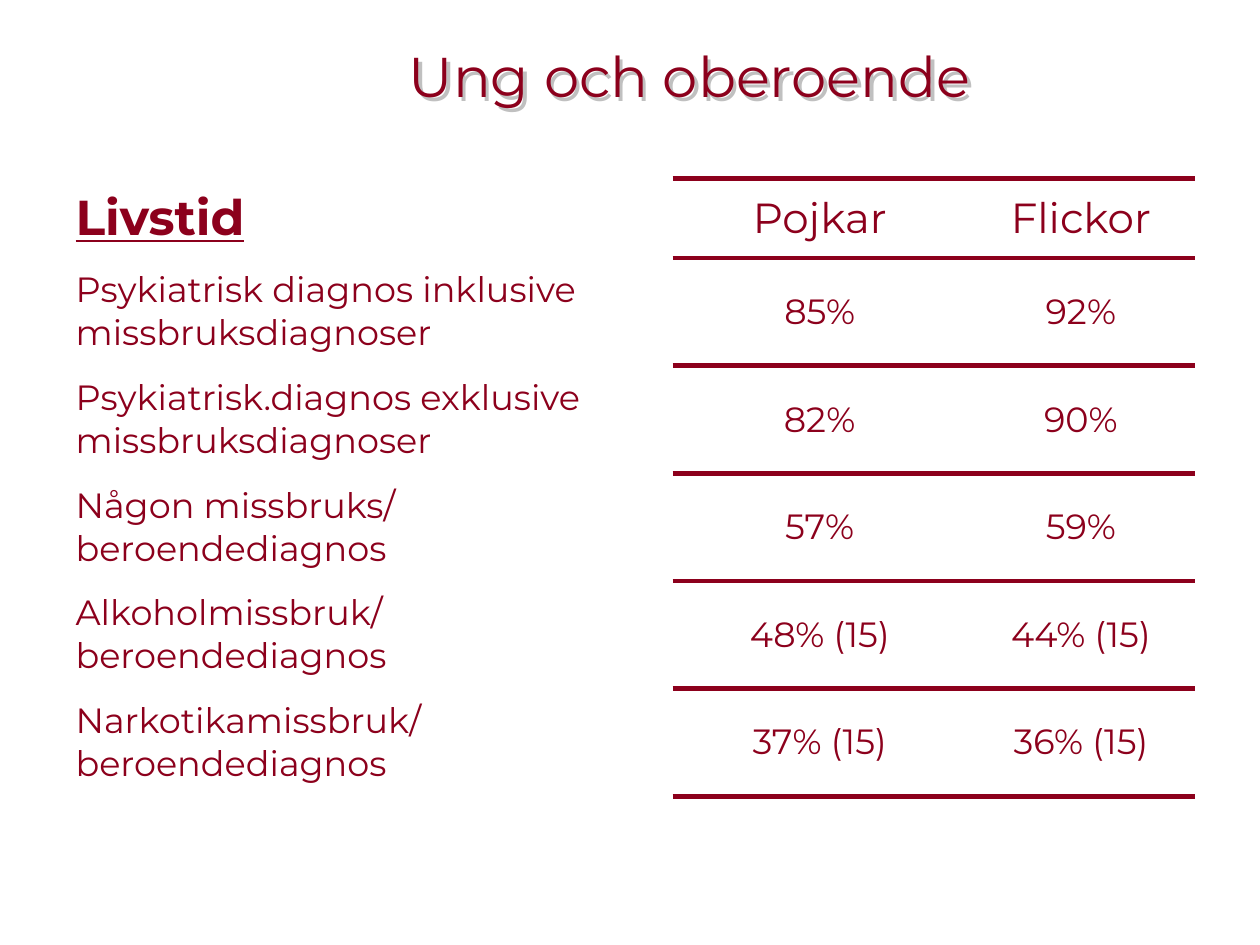
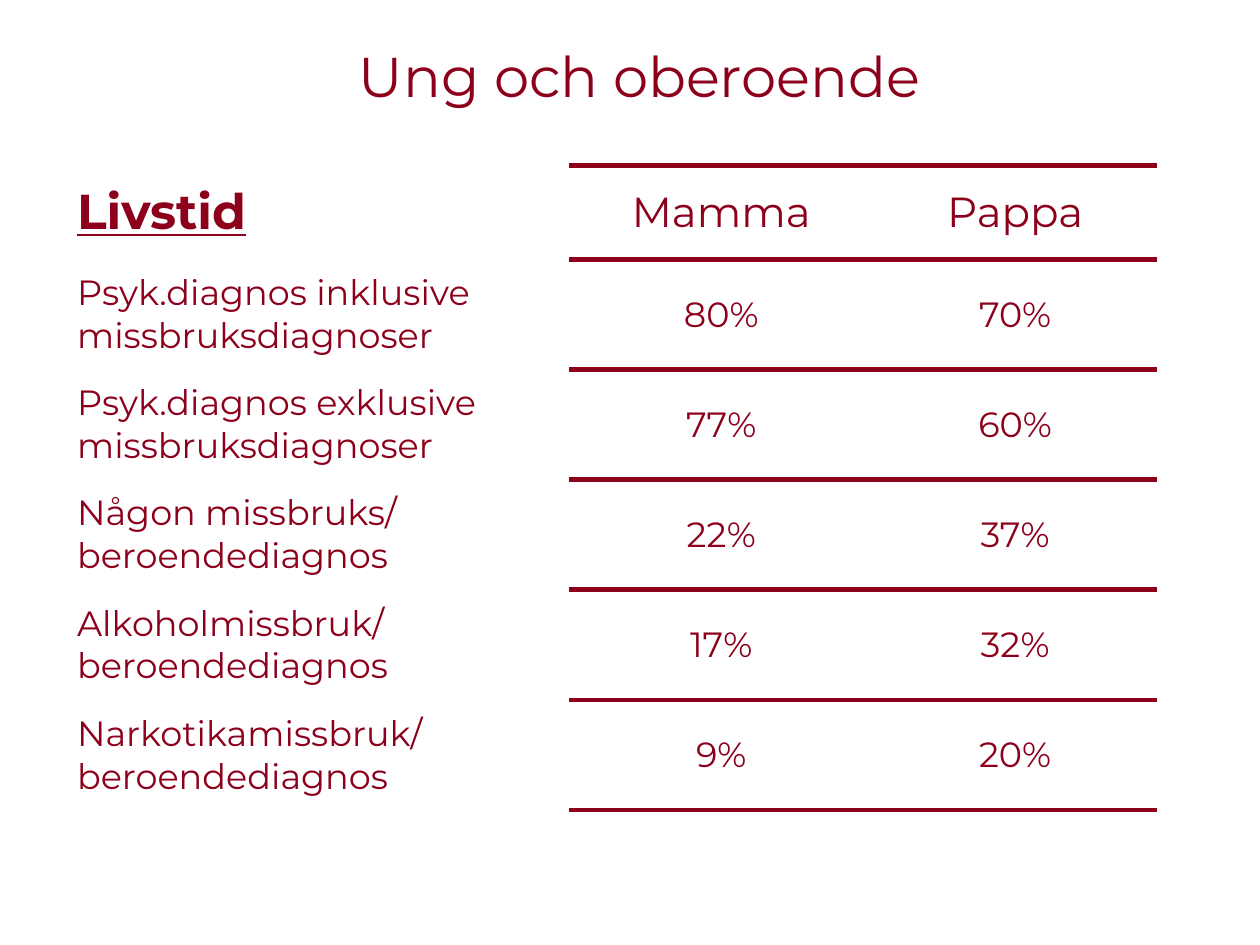
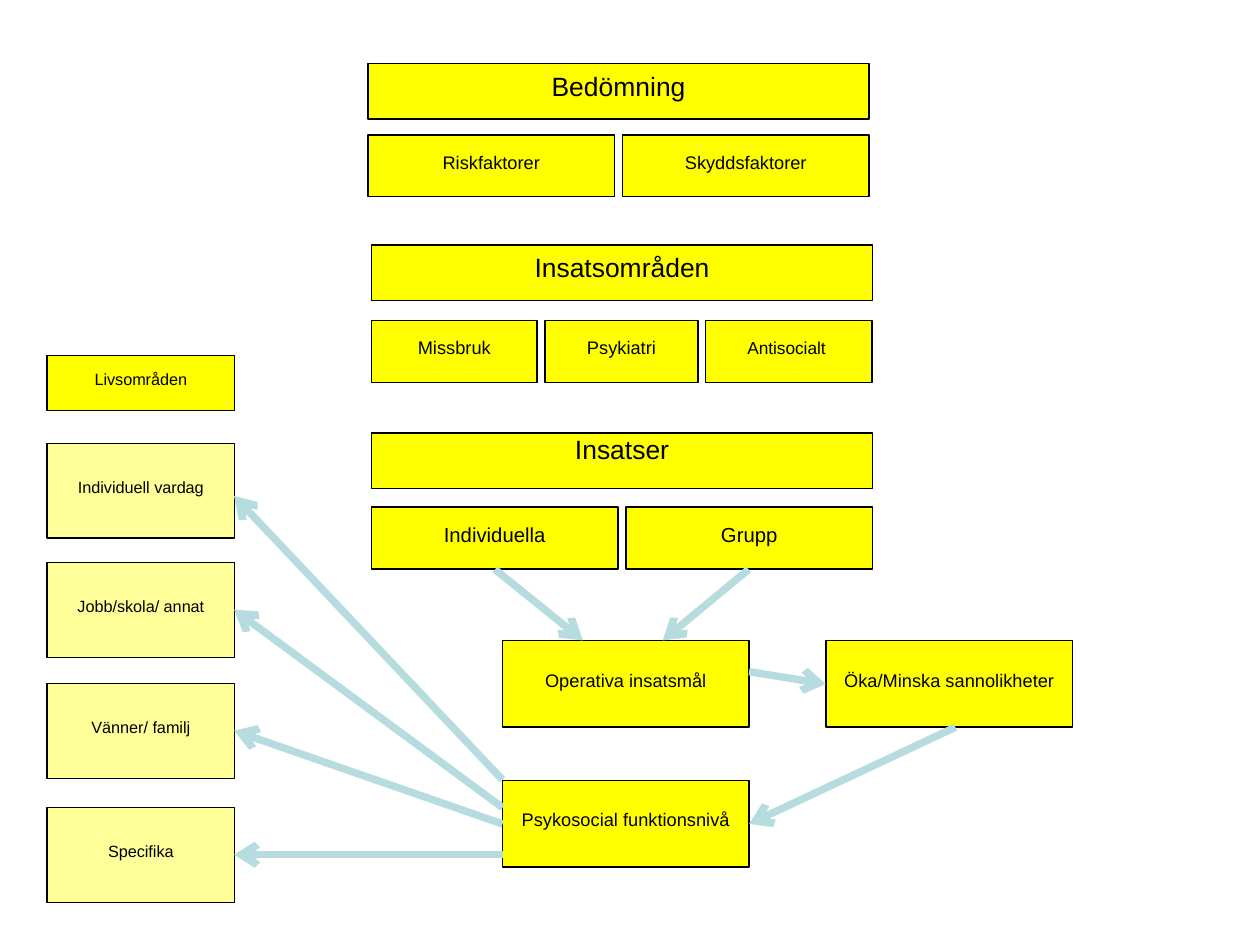
import pptx
import pptx.dml.color
import pptx.enum.shapes
import pptx.enum.text
import pptx.util
from lxml import etree
from pptx.oxml.ns import qn

Cm = pptx.util.Cm
Pt = pptx.util.Pt
ANCHOR = pptx.enum.text.MSO_ANCHOR
ALIGN = pptx.enum.text.PP_ALIGN
RECTANGLE = pptx.enum.shapes.MSO_SHAPE.RECTANGLE

# Shared look
WINE = "8C001C"
WHITE = "FFFFFF"
BLACK = "000000"
YELLOW = "FFFF00"
PALE_YELLOW = "FFFF99"
ICE_BLUE = "B6DCDF"
SHADOW_GREY = "C0C0C0"
TABLE_FONT = "Montserrat"
CHART_FONT = "Arial"
GAP = 0.16
SMALL, MEDIUM, LARGE, HEADING = 9.3, 10.4, 11.6, 15.1

# Diagnosis rows found in both tables
ADDICTION_LABELS = [
    "Någon missbruks/ beroendediagnos",
    "Alkoholmissbruk/ beroendediagnos",
    "Narkotikamissbruk/ beroendediagnos",
]


def colour(code):
    return pptx.dml.color.RGBColor.from_string(code)


def write(frame, text, size=20, font=TABLE_FONT, ink=WINE, bold=False,
          underline=False, align=ALIGN.CENTER):
    para = frame.paragraphs[0]
    para.alignment = align
    span = para.add_run()
    span.text = text
    span.font.name = font
    span.font.size = Pt(size)
    span.font.color.rgb = colour(ink)
    span.font.bold = bold
    span.font.underline = underline


def add_rectangle(page, left, top, width, height, fill):
    box = page.shapes.add_shape(RECTANGLE, Cm(left), Cm(top), Cm(width), Cm(height))
    box.shadow.inherit = False
    box.fill.solid()
    box.fill.fore_color.rgb = colour(fill)
    box.line.fill.background()
    box.text_frame.word_wrap = True
    return box


def write_title(box, anchor):
    box.text_frame.word_wrap = True
    box.text_frame.vertical_anchor = anchor
    write(box.text_frame, "Ung och oberoende", size=32)


def add_text_shadow(box):
    effects = etree.SubElement(box._element.spPr, qn("a:effectLst"))
    cast = etree.SubElement(effects, qn("a:outerShdw"), dist="38000",
                            dir="2700000", algn="ctr")
    etree.SubElement(cast, qn("a:srgbClr"), val=SHADOW_GREY)


def set_borders(cell, ruled):
    properties = cell._tc.get_or_add_tcPr()
    for side in ("L", "R", "T", "B"):
        line = etree.SubElement(properties, qn("a:ln" + side), w=str(Pt(3)))
        if ruled and side in "TB":
            fill = etree.SubElement(line, qn("a:solidFill"))
            etree.SubElement(fill, qn("a:srgbClr"), val=WINE)
        else:
            etree.SubElement(line, qn("a:noFill"))


def add_diagnosis_table(page, left, top, widths, header_height, row_height,
                        heads, rows):
    lines = [("Livstid", *heads), *rows]
    height = header_height + row_height * len(rows)
    table = page.shapes.add_table(len(lines), len(widths), Cm(left), Cm(top),
                                  Cm(sum(widths)), Cm(height)).table
    table.first_row = table.horz_banding = False
    for column, width in zip(table.columns, widths):
        column.width = Cm(width)
    for row_number, texts in enumerate(lines):
        is_head = row_number == 0
        table.rows[row_number].height = Cm(header_height if is_head else row_height)
        for column_number, text in enumerate(texts):
            is_label = column_number == 0
            cell = table.cell(row_number, column_number)
            set_borders(cell, ruled=not is_label)
            cell.fill.background()
            cell.vertical_anchor = ANCHOR.MIDDLE
            size = (28 if is_label else 24) if is_head else 20
            write(cell.text_frame, text, size=size,
                  bold=is_head and is_label, underline=is_head and is_label,
                  align=ALIGN.LEFT if is_label else ALIGN.CENTER)


def add_box(page, text, left, top, width, height, size=MEDIUM, fill=YELLOW,
            anchor=ANCHOR.MIDDLE, bottom=0.16):
    box = add_rectangle(page, left, top, width, height, fill)
    box.line.color.rgb = colour(BLACK)
    box.line.width = Pt(0.75)
    frame = box.text_frame
    frame.vertical_anchor = anchor
    frame.margin_left = frame.margin_right = frame.margin_top = 0
    frame.margin_bottom = Cm(bottom)
    write(frame, text, size=size, font=CHART_FONT, ink=BLACK)


def add_section(page, heading, left, top, parts, parts_top, anchor=ANCHOR.MIDDLE):
    """Draw a wide heading box with a row of smaller boxes under it."""
    add_box(page, heading, left, top, 10.1, 1.12, size=HEADING, anchor=anchor,
            bottom=0.22)
    for text, width, size in parts:
        add_box(page, text, left, parts_top, width, 1.25, size=size)
        left += width + GAP


def add_arrow(page, start, end):
    arrow = page.shapes.add_connector(pptx.enum.shapes.MSO_CONNECTOR.STRAIGHT,
                                      *map(Cm, start), *map(Cm, end))
    arrow.line.color.rgb = colour(ICE_BLUE)
    arrow.line.width = Pt(4.25)
    etree.SubElement(arrow.line._get_or_add_ln(), qn("a:tailEnd"), type="arrow")
    etree.SubElement(arrow._element.spPr, qn("a:effectLst"))


def build_youth_page(page):
    title = page.shapes.add_textbox(Cm(6.5), Cm(0), Cm(14.81), Cm(2.32))
    write_title(title, ANCHOR.BOTTOM)
    add_text_shadow(title)
    labels = ["Psykiatrisk diagnos inklusive missbruksdiagnoser",
              "Psykiatrisk.diagnos exklusive missbruksdiagnoser",
              *ADDICTION_LABELS]
    boys = ["85%", "82%", "57%", "48% (15)", "37% (15)"]
    girls = ["92%", "90%", "59%", "44% (15)", "36% (15)"]
    add_diagnosis_table(page, 1.27, 3.6, [12.29, 5.93, 4.6], 1.6, 2.17,
                        ["Pojkar", "Flickor"], list(zip(labels, boys, girls)))


def build_parents_page(page):
    title = add_rectangle(page, 6.3, 0.71, 13.2, 1.6, WHITE)
    write_title(title, ANCHOR.MIDDLE)
    labels = ["Psyk.diagnos inklusive missbruksdiagnoser",
              "Psyk.diagnos exklusive missbruksdiagnoser",
              *ADDICTION_LABELS]
    mothers = ["80%", "77%", "22%", "17%", "9%"]
    fathers = ["70%", "60%", "37%", "32%", "20%"]
    add_diagnosis_table(page, 1.3, 3.33, [10.17, 6.14, 5.71], 1.9, 2.22,
                        ["Mamma", "Pappa"], list(zip(labels, mothers, fathers)))


def build_process_page(page):
    # Assessment, areas and interventions
    add_section(page, "Bedömning", 7.42, 1.28,
                [("Riskfaktorer", 4.97, MEDIUM), ("Skyddsfaktorer", 4.97, MEDIUM)],
                2.72)
    add_section(page, "Insatsområden", 7.49, 4.94,
                [("Missbruk", 3.34, MEDIUM), ("Psykiatri", 3.08, MEDIUM),
                 ("Antisocialt ", 3.35, 9.9)], 6.46)
    add_section(page, "Insatser", 7.49, 8.73,
                [("Individuella", 4.97, LARGE), ("Grupp", 4.97, LARGE)],
                10.22, anchor=ANCHOR.TOP)

    # Goals and outcomes
    for text, left, top in [("Operativa insatsmål", 10.13, 12.91),
                            ("Öka/Minska sannolikheter", 16.65, 12.91),
                            ("Psykosocial funktionsnivå", 10.13, 15.73)]:
        add_box(page, text, left, top, 4.97, 1.75)

    # Areas of life
    add_box(page, "Livsområden", 0.95, 7.17, 3.78, 1.11, size=SMALL)
    for text, top in [("Individuell vardag", 8.94), ("Jobb/skola/ annat", 11.34),
                      ("Vänner/ familj", 13.78), ("Specifika", 16.28)]:
        add_box(page, text, 0.95, top, 3.78, 1.91, size=SMALL, fill=PALE_YELLOW)

    # Arrows to the areas of life, then between the goals
    for start_top, end_top in [(15.72, 10), (16.28, 12.29),
                               (16.61, 14.73), (17.23, 17.23)]:
        add_arrow(page, (10.13, start_top), (4.72, end_top))
    for start, end in [((9.98, 11.48), (11.75, 12.91)),
                       ((15.09, 11.48), (13.36, 12.91)),
                       ((15.1, 13.54), (16.65, 13.79)),
                       ((19.26, 14.66), (15.1, 16.61))]:
        add_arrow(page, start, end)


def main():
    deck = pptx.Presentation()
    deck.slide_width = Cm(25.4)
    deck.slide_height = Cm(19.05)
    for build in (build_youth_page, build_parents_page, build_process_page):
        page = deck.slides.add_slide(deck.slide_layouts[6])
        page.background.fill.solid()
        page.background.fill.fore_color.rgb = colour(WHITE)
        build(page)
    deck.save("out.pptx")


if __name__ == "__main__":
    main()
